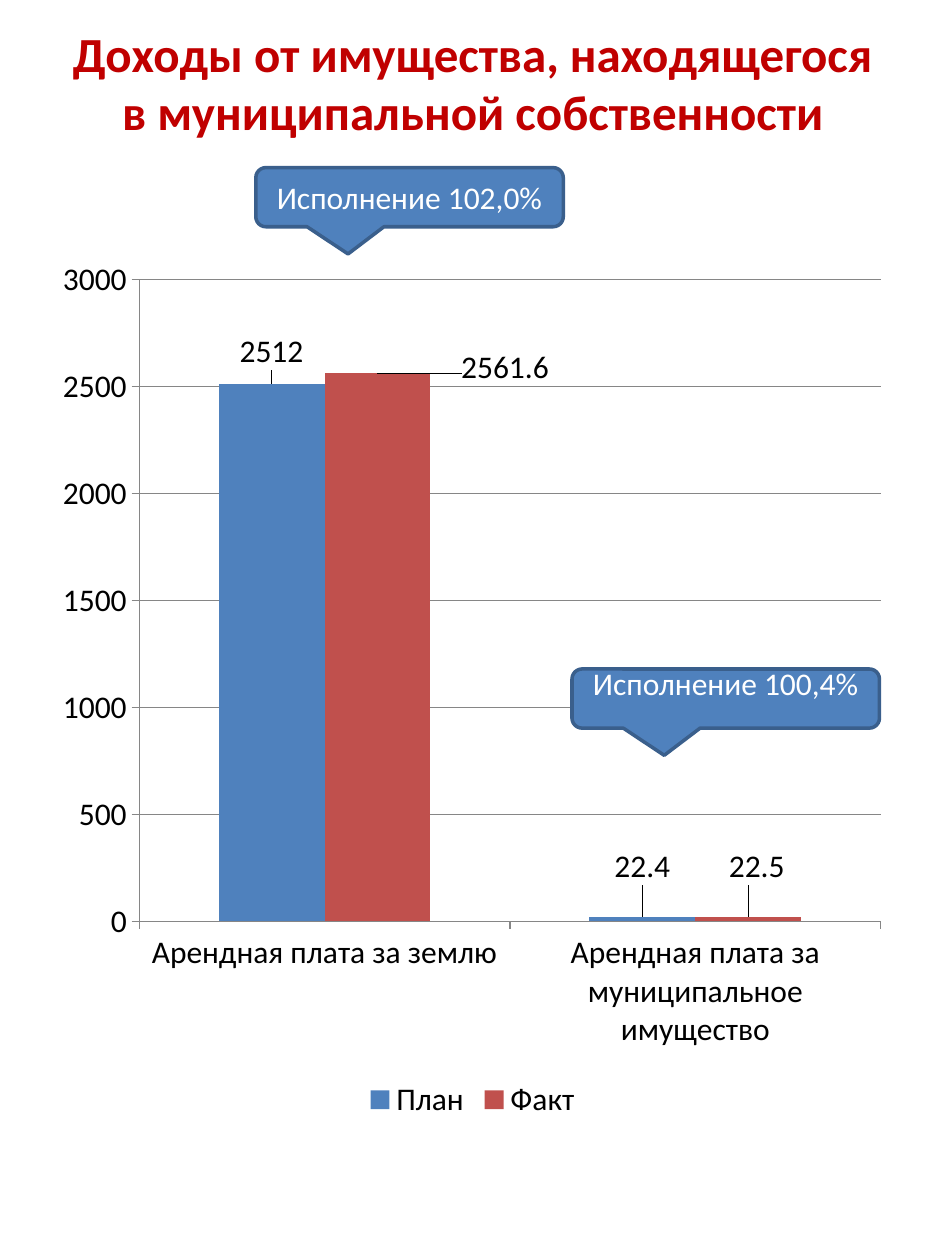
from lxml import etree
from pptx import Presentation
from pptx import util as u
from pptx.chart.data import CategoryChartData
from pptx.dml.color import RGBColor
from pptx.enum import chart as charts, shapes, text
from pptx.oxml.ns import qn

TITLE = "Доходы от имущества, находящегося в муниципальной собственности"
CATEGORIES = ["Арендная плата за землю", "Арендная плата за муниципальное имущество"]
SERIES = [
    {"name": "План", "values": (2512, 22.4), "color": "plan",
     "label_shifts": [(0, -0.01), (0, -0.03)]},
    {"name": "Факт", "values": (2561.6, 22.5), "color": "fact",
     "label_shifts": [(0.15, 0.02), (0.01, -0.03)]},
]
CALLOUTS = [
    {"text": "Исполнение 102,0%", "left": 146.2, "top": 95.8,
     "frame": {"vertical_anchor": text.MSO_ANCHOR.MIDDLE}},
    {"text": "Исполнение 100,4%", "left": 326.9, "top": 382.3,
     "frame": {"vertical_anchor": text.MSO_ANCHOR.TOP, "margin_top": u.Pt(-4.5)}},
]
COLORS = {"title": "C00000", "plan": "4F81BD", "fact": "C0504D", "border": "3A5F8C",
          "callout_text": "FFFFFF", "chart_text": "000000", "grid": "868686"}
FONT = "Calibri"
LEFT, WIDTH = 27, 486
CALLOUT_SIZE = (175.7, 33.8)
CALLOUT_ADJUSTMENTS = (-0.2, 0.96, 0.17)
PLOT_AREA = {"x": 0.108, "y": 0.041, "w": 0.872, "h": 0.728}


def color(name):
    return RGBColor.from_string(COLORS[name])


def apply(target, values):
    for name, value in values.items():
        setattr(target, name, value)


def style_font(font, size, color_name, bold=False):
    apply(font, {"name": FONT, "size": u.Pt(size), "bold": bold})
    font.color.rgb = color(color_name)


def place(shape, left, top, width, height):
    apply(shape, {"left": u.Pt(left), "top": u.Pt(top),
                  "width": u.Pt(width), "height": u.Pt(height)})


def manual_layout(values, modes=()):
    layout = etree.Element(qn("c:layout"))
    manual = etree.SubElement(layout, qn("c:manualLayout"))
    for name, value in [*modes, *values.items()]:
        etree.SubElement(manual, qn(f"c:{name}")).set("val", str(value))
    return layout


def write_text(frame, words, size, color_name, bold=False):
    para = frame.paragraphs[0]
    para.alignment = text.PP_ALIGN.CENTER
    span = para.add_run()
    span.text = words
    style_font(span.font, size, color_name, bold)


def add_title(page):
    box = page.shapes.title
    place(box, LEFT, 28.8, WIDTH, 36)
    apply(box.text_frame, {"word_wrap": True, "auto_size": text.MSO_AUTO_SIZE.NONE,
                           "vertical_anchor": text.MSO_ANCHOR.MIDDLE})
    write_text(box.text_frame, TITLE, 28, "title", True)


def add_income_chart(page):
    data = CategoryChartData()
    data.categories = CATEGORIES
    for item in SERIES:
        data.add_series(item["name"], item["values"])
    chart = page.shapes.add_chart(charts.XL_CHART_TYPE.COLUMN_CLUSTERED, u.Pt(LEFT),
                                  u.Pt(139), u.Pt(WIDTH), u.Pt(504), data).chart
    style_font(chart.font, 18, "chart_text")
    apply(chart, {"has_title": False, "has_legend": True})
    apply(chart.legend, {"position": charts.XL_LEGEND_POSITION.BOTTOM,
                         "include_in_layout": False})
    apply(chart.value_axis, {"minimum_scale": 0, "maximum_scale": 3000, "major_unit": 500,
                             "has_major_gridlines": True})
    lines = [chart.value_axis.major_gridlines.format.line]
    for axis in (chart.category_axis, chart.value_axis):
        axis.major_tick_mark = charts.XL_TICK_MARK.OUTSIDE
        lines.append(axis.format.line)
    for line in lines:
        line.color.rgb = color("grid")
        line.width = u.Pt(0.75)
    plot = chart.plots[0]
    apply(plot, {"gap_width": 150, "overlap": 0, "vary_by_categories": False})
    for item, series in zip(SERIES, plot.series):
        series.format.fill.solid()
        series.format.fill.fore_color.rgb = color(item["color"])
        series.data_labels.show_value = True
        for index in range(len(CATEGORIES)):
            label = series.points[index].data_label
            label.position = charts.XL_LABEL_POSITION.OUTSIDE_END
        labels = series._element.findall(".//" + qn("c:dLbl"))
        for label, (x, y) in zip(labels, item["label_shifts"]):
            label.insert(1, manual_layout({"x": x, "y": y}))
    area = chart._chartSpace.find(".//" + qn("c:plotArea"))
    for layout in area.findall(qn("c:layout")):
        area.remove(layout)
    modes = [("layoutTarget", "inner"), ("xMode", "edge"), ("yMode", "edge")]
    area.insert(0, manual_layout(PLOT_AREA, modes))


def add_callout(page, item):
    box = page.shapes.add_shape(shapes.MSO_SHAPE.ROUNDED_RECTANGULAR_CALLOUT,
                                u.Pt(item["left"]), u.Pt(item["top"]),
                                *map(u.Pt, CALLOUT_SIZE))
    for index, value in enumerate(CALLOUT_ADJUSTMENTS):
        box.adjustments[index] = value
    box.shadow.inherit = False
    box.fill.solid()
    box.fill.fore_color.rgb = color("plan")
    box.line.color.rgb = color("border")
    box.line.width = u.Pt(2)
    apply(box.text_frame, {"word_wrap": True, **item["frame"]})
    write_text(box.text_frame, item["text"], 18, "callout_text")


def main():
    deck = Presentation()
    apply(deck, {"slide_width": u.Pt(540), "slide_height": u.Pt(720)})
    page = deck.slides.add_slide(deck.slide_layouts[5])
    add_title(page)
    add_income_chart(page)
    for item in CALLOUTS:
        add_callout(page, item)
    deck.save("out.pptx")


if __name__ == "__main__":
    main()
